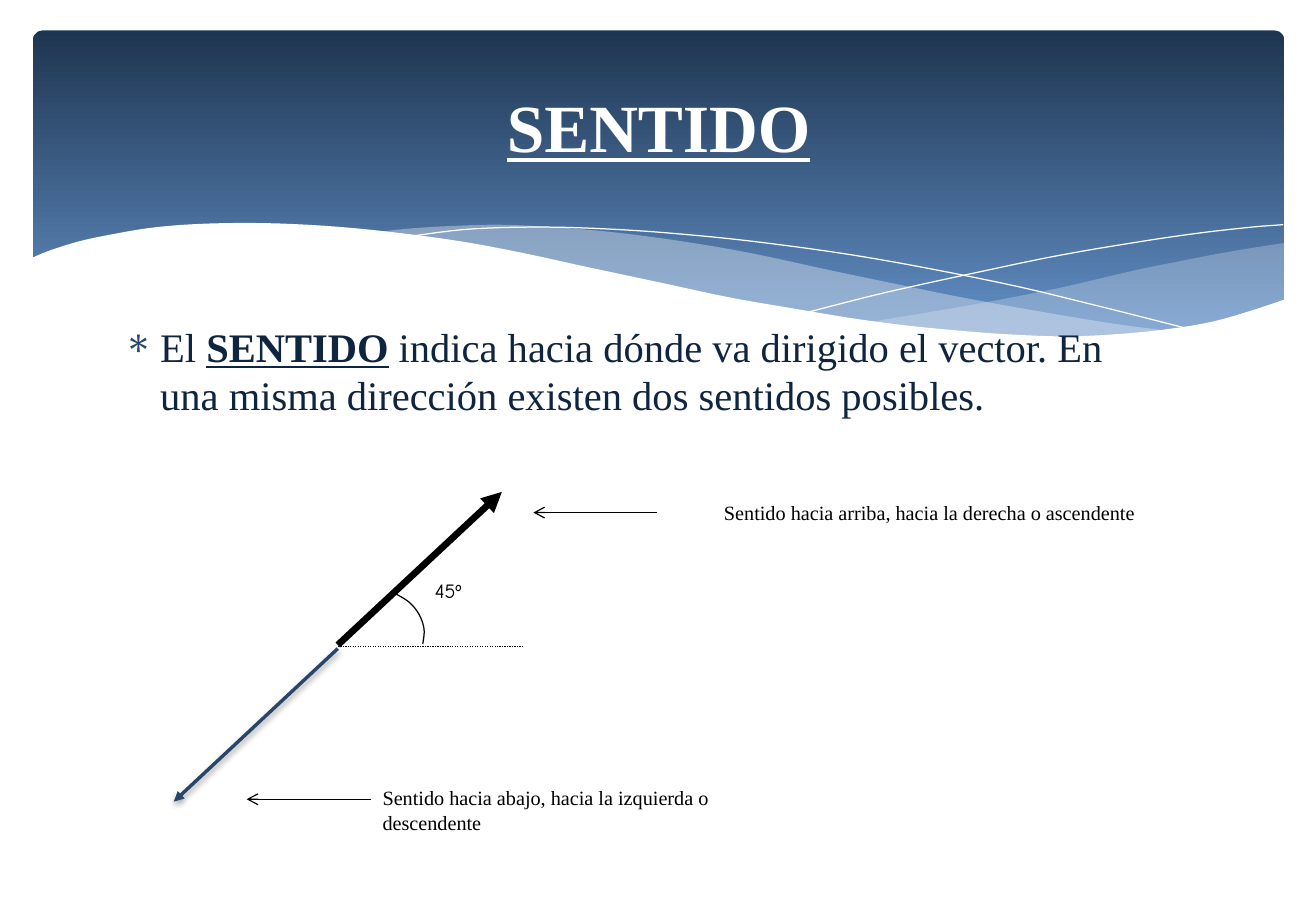
from lxml.etree import SubElement
from pptx import Presentation
from pptx.dml.color import RGBColor
from pptx.enum.dml import MSO_LINE_DASH_STYLE as Dash
from pptx.enum.shapes import MSO_CONNECTOR_TYPE as Connector, MSO_SHAPE as Shape
from pptx.enum.text import MSO_ANCHOR as Anchor, MSO_AUTO_SIZE as AutoSize, PP_ALIGN as Align
from pptx.oxml.ns import qn
from pptx.util import Pt

PX = 9144
NAVY, STEEL, INK = "1E3550", "608DC3", "0F243E"
ARROW_BLUE, MIST, WHITE, BLACK = "28466A", "E7EDF5", "FFFFFF", "000000"
SERIF, HAND = "Times New Roman", "Comic Neue"

WAVE = [(25, 213), (39, 207), (64, 199), (92, 193), (129, 187), (174, 184), (229, 184), (293, 188),
        (368, 197), (424, 207), (484, 220), (545, 233), (601, 245), (653, 254), (701, 262),
        (746, 268), (787, 272), (825, 275), (876, 277), (921, 275), (961, 271), (997, 265),
        (1029, 256), (1059, 246)]
RIGHT_TOP = [(1057, 200), (1013, 207), (966, 216), (932, 223), (872, 237), (816, 248), (765, 257), (716, 265)]
RIGHT_BOTTOM = [(716, 265), (764, 271), (820, 276), (870, 278), (925, 276), (972, 270), (1013, 262), (1057, 247)]
MIDDLE_TOP = [(967, 273), (907, 265), (803, 247), (724, 231), (681, 222), (616, 208), (557, 198),
              (503, 191), (455, 187), (411, 185), (373, 186), (339, 188), (310, 191)]
MIDDLE_BOTTOM = [(310, 191), (350, 196), (392, 203), (438, 211), (487, 222), (574, 240), (651, 255),
                 (721, 266), (783, 274), (837, 277), (886, 278), (929, 276), (967, 273)]
FALLING_LINE = [(335, 195), (382, 189), (435, 187), (488, 188), (552, 192), (630, 200), (720, 213),
                (824, 233), (900, 251), (983, 272)]
RISING_LINE = [(665, 257), (728, 241), (810, 223), (873, 210), (938, 199), (986, 192), (1030, 187), (1056, 185)]
ANGLE_ARC = [(326, 489), (337, 496), (345, 506), (349, 518), (348, 530)]


def rgb(value):
    """Turn a hex string into a colour."""
    return RGBColor.from_string(value)


def curve(knots, steps=5):
    """Sample a smooth curve that passes through the knots."""
    padded = [knots[0], *knots, knots[-1]]
    points = [knots[0]]
    for a, b, c, d in zip(padded, padded[1:], padded[2:], padded[3:]):
        for step in range(1, steps + 1):
            t = step / steps
            points.append(tuple(
                q + t * (r - p + t * (2 * p - 5 * q + 4 * r - s + t * (3 * q - p - 3 * r + s))) / 2
                for p, q, r, s in zip(a, b, c, d)))
    return points


class SlideBuilder:
    """Hold the style and the current slide."""

    def __init__(self, width, height):
        """Start a presentation with one blank slide."""
        self.presentation = Presentation()
        self.presentation.slide_width = width * PX
        self.presentation.slide_height = height * PX
        self.slide = self.presentation.slides.add_slide(self.presentation.slide_layouts[6])

    def banner(self, left, top, width, height):
        """Add the rounded header with its vertical gradient."""
        shape = self.slide.shapes.add_shape(
            Shape.ROUNDED_RECTANGLE, left * PX, top * PX, width * PX, height * PX)
        shape.shadow.inherit = False
        shape.adjustments[0] = 0.03
        shape.line.fill.background()
        shape.fill.gradient()
        shape.fill.gradient_angle = 270
        for stop, colour, position in zip(shape.fill.gradient_stops, (NAVY, STEEL), (0, 0.9)):
            stop.color.rgb = rgb(colour)
            stop.position = position

    def outline(self, points, fill=None, opacity=100, line=None, weight=0):
        """Add a filled area, or an open stroke when no fill is given."""
        points = [(x * PX, y * PX) for x, y in points]
        builder = self.slide.shapes.build_freeform(*points[0])
        builder.add_line_segments(points[1:], close=fill is not None)
        shape = builder.convert_to_shape()
        shape.shadow.inherit = False
        if fill:
            shape.fill.solid()
            shape.fill.fore_color.rgb = rgb(fill)
            colour = shape.fill._xPr.find(qn("a:solidFill"))[0]
            if opacity < 100:
                SubElement(colour, qn("a:alpha"), val=str(opacity * 1000))
        else:
            shape.fill.background()
        if line:
            shape.line.color.rgb = rgb(line)
            shape.line.width = Pt(weight)
        else:
            shape.line.fill.background()

    def line(self, start, end, colour=BLACK, weight=0.75, tip=None, dash=None, shadow=False):
        """Add a straight line, with an optional arrowhead at its end."""
        connector = self.slide.shapes.add_connector(
            Connector.STRAIGHT, *(value * PX for value in (*start, *end)))
        connector.line.color.rgb = rgb(colour)
        connector.line.width = Pt(weight)
        if dash:
            connector.line.dash_style = dash
        if tip:
            SubElement(connector.line._get_or_add_ln(), qn("a:tailEnd"), type=tip)
        effects = SubElement(connector._element.spPr, qn("a:effectLst"))
        if shadow:
            cast = SubElement(effects, qn("a:outerShdw"), blurRad=str(Pt(4)), dist=str(Pt(2)),
                              dir="5400000", rotWithShape="0")
            tint = SubElement(cast, qn("a:srgbClr"), val=BLACK)
            SubElement(tint, qn("a:alpha"), val="38000")

    def text(self, left, top, width, height, parts, size=12, font=SERIF, colour=BLACK,
             align=Align.LEFT, anchor=Anchor.TOP, before=6, grow=True):
        """Add one paragraph of (words, strong) parts and return it."""
        shape = self.slide.shapes.add_textbox(left * PX, top * PX, width * PX, height * PX)
        frame = shape.text_frame
        frame.word_wrap = True
        frame.auto_size = AutoSize.SHAPE_TO_FIT_TEXT if grow else AutoSize.NONE
        frame.vertical_anchor = anchor
        paragraph = frame.paragraphs[0]
        paragraph.alignment = align
        paragraph.space_before = Pt(before)
        for words, strong in parts:
            run = paragraph.add_run()
            run.text = words
            run.font.name = font
            run.font.size = Pt(size)
            run.font.color.rgb = rgb(colour)
            run.font.bold = run.font.underline = strong
        return paragraph

    def bullet(self, paragraph, symbol, colour, indent):
        """Give a paragraph a coloured bullet and a hanging indent."""
        properties = paragraph._p.get_or_add_pPr()
        properties.set("marL", str(indent * PX))
        properties.set("indent", str(-indent * PX))
        SubElement(SubElement(properties, qn("a:buClr")), qn("a:srgbClr"), val=colour)
        SubElement(properties, qn("a:buFont"), typeface="Symbol")
        SubElement(properties, qn("a:buChar"), char=symbol)


def main():
    """Build the slide and save it."""
    builder = SlideBuilder(1083, 750)
    builder.banner(27, 25, 1030, 270)
    builder.outline(curve(RIGHT_TOP) + curve(RIGHT_BOTTOM), MIST, 29)
    builder.outline(curve(MIDDLE_TOP) + curve(MIDDLE_BOTTOM), MIST, 40)
    for knots in (FALLING_LINE, RISING_LINE):
        builder.outline(curve(knots), line=WHITE)
    builder.outline(curve(WAVE) + [(1059, 329), (25, 329)], WHITE)

    builder.text(92, 60, 900, 87, [("SENTIDO", True)], 40, colour=WHITE,
                 align=Align.CENTER, anchor=Anchor.MIDDLE, before=0, grow=False)
    statement = builder.text(92, 260, 878, 377, [
        ("El ", False), ("SENTIDO", True),
        (" indica hacia dónde va dirigido el vector. En una misma dirección "
         "existen dos sentidos posibles.", False)], 24, colour=INK, before=4.8, grow=False)
    builder.bullet(statement, "∗", ARROW_BLUE, 30)

    builder.text(305, 642, 354, 50, [("Sentido hacia abajo, hacia la izquierda o descendente", False)])
    builder.text(586, 407, 490, 30, [("Sentido hacia arriba, hacia la derecha o ascendente", False)])
    for left, y in ((203, 658), (439, 422)):
        builder.line((left + 102, y), (left, y), tip="arrow")

    builder.line((278, 531), (413, 405), weight=4, tip="triangle")
    builder.line((278, 532), (431, 532), dash=Dash.ROUND_DOT)
    builder.outline(curve(ANGLE_ARC), line=BLACK, weight=0.75)
    builder.text(348, 471, 99, 30, [("45º", False)], font=HAND)
    builder.line((278, 534), (143, 660), ARROW_BLUE, 2, "triangle", shadow=True)
    builder.presentation.save("out.pptx")


if __name__ == "__main__":
    main()
